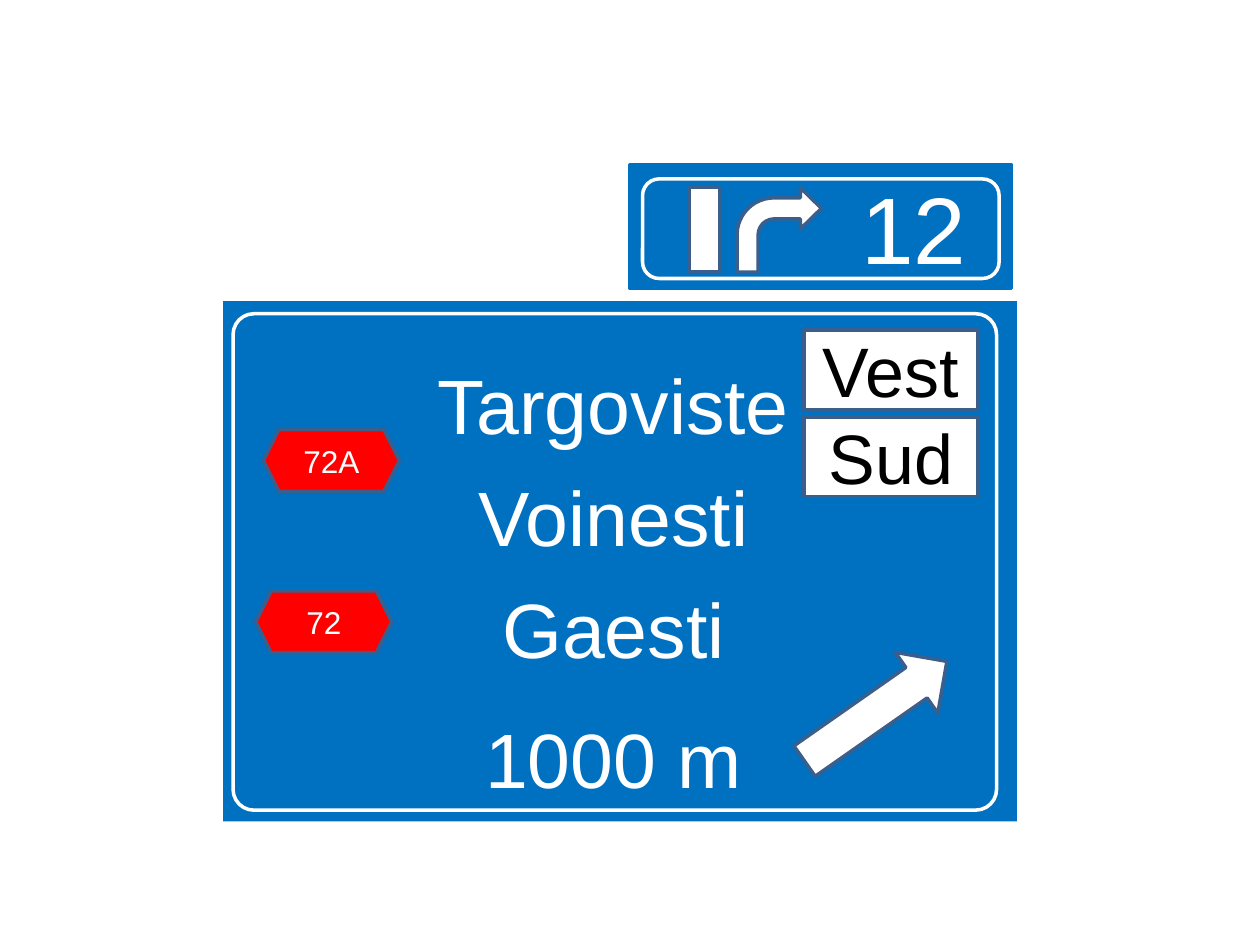
from dataclasses import dataclass

from pptx import Presentation, util as u
from pptx.dml.color import RGBColor
from pptx.enum import shapes, text


@dataclass(frozen=True)
class Theme:
    font: str = "Arial"
    blue: str = "0070C0"
    red: str = "FF0000"
    white: str = "FFFFFF"
    black: str = "000000"
    edge: str = "3A5F8C"
    line: float = 2
    exit_size: int = 54
    place_size: int = 44
    heading_size: int = 40
    road_size: int = 18


THEME = Theme()
KIND = shapes.MSO_SHAPE


def place(box, x, y, w, h):
    """Turn an offset and size in inches into a box inside the given one."""
    return box[0] + x, box[1] + y, w, h


def write(shape, lines, size, color=THEME.white, gaps=None, insets=(0, 0, 0, 0),
          anchor=text.MSO_ANCHOR.MIDDLE):
    """Set centred lines; gaps holds the space before each line in points."""
    frame = shape.text_frame
    frame.word_wrap = True
    frame.auto_size = text.MSO_AUTO_SIZE.NONE
    frame.vertical_anchor = anchor
    (frame.margin_left, frame.margin_top,
     frame.margin_right, frame.margin_bottom) = map(u.Inches, insets)
    frame.text = "\n".join(lines)
    for paragraph, gap in zip(frame.paragraphs, gaps or [0] * len(lines)):
        paragraph.alignment = text.PP_ALIGN.CENTER
        paragraph.space_before = u.Pt(gap)
        font = paragraph.runs[0].font
        font.name, font.size = THEME.font, u.Pt(size)
        font.color.rgb = RGBColor.from_string(color)


def draw(slide, kind, box, fill=None, line=THEME.edge, adjust=(), turn=0):
    shape = slide.shapes.add_shape(kind, *map(u.Inches, box))
    shape.shadow.inherit = False
    shape.rotation = turn
    for index, value in enumerate(adjust):
        shape.adjustments[index] = value
    if fill:
        shape.fill.solid()
        shape.fill.fore_color.rgb = RGBColor.from_string(fill)
    else:
        shape.fill.background()
    shape.line.color.rgb = RGBColor.from_string(line)
    shape.line.width = u.Pt(THEME.line)
    return shape


def direction_sign(slide, box):
    # Blue panel with the destinations
    panel = slide.placeholders[1]
    panel.left, panel.top, panel.width, panel.height = map(u.Inches, box)
    panel.fill.solid()
    panel.fill.fore_color.rgb = RGBColor.from_string(THEME.blue)
    write(panel, ["Targoviste", "Voinesti", "Gaesti", "1000 m"], THEME.place_size,
          gaps=[0, 11, 11, 22], insets=(0, 0.45, 0.1, 0.2),
          anchor=text.MSO_ANCHOR.TOP)

    # Exit arrow
    draw(slide, KIND.RIGHT_ARROW, place(box, 4.49, 2.96, 1.38, 0.59),
         THEME.white, turn=325)

    # Road numbers
    for road, x, y in [("72A", 0.32, 1.02), ("72", 0.26, 2.3)]:
        badge = draw(slide, KIND.HEXAGON, place(box, x, y, 1.08, 0.49), THEME.red)
        write(badge, [road], THEME.road_size)

    # Compass headings
    for row, heading in enumerate(["Vest", "Sud"]):
        plate = draw(slide, KIND.RECTANGLE,
                     place(box, 4.61, 0.23 + row * 0.69, 1.38, 0.63), THEME.white)
        write(plate, [heading], THEME.heading_size, THEME.black)

    # White border
    draw(slide, KIND.ROUNDED_RECTANGLE, place(box, 0.08, 0.1, 6.06, 3.94),
         line=THEME.white, adjust=[0.042])


def exit_sign(slide, box):
    # Blue panel with the exit number
    panel = draw(slide, KIND.ROUNDED_RECTANGLE, box, THEME.blue, THEME.blue, [0])
    write(panel, ["12"], THEME.exit_size, insets=(1.57, 0.05, 0.1, 0.05))

    # Main road and the branch to the right
    draw(slide, KIND.RECTANGLE, place(box, 0.47, 0.18, 0.24, 0.67), THEME.white)
    draw(slide, KIND.BENT_ARROW, place(box, 0.85, 0.18, 0.67, 0.67), THEME.white,
         adjust=[0.25, 0.245, 0.25, 0.438])

    # White border
    draw(slide, KIND.ROUNDED_RECTANGLE, place(box, 0.1, 0.11, 2.83, 0.79),
         line=THEME.white)


def main():
    deck = Presentation()
    deck.slide_width, deck.slide_height = u.Inches(10), u.Inches(7.5)
    slide = deck.slides.add_slide(deck.slide_layouts[0])
    title = slide.shapes.title.element
    title.getparent().remove(title)
    direction_sign(slide, (1.77, 2.39, 6.3, 4.13))
    exit_sign(slide, (5, 1.31, 3.03, 0.98))
    deck.save("out.pptx")


if __name__ == "__main__":
    main()
